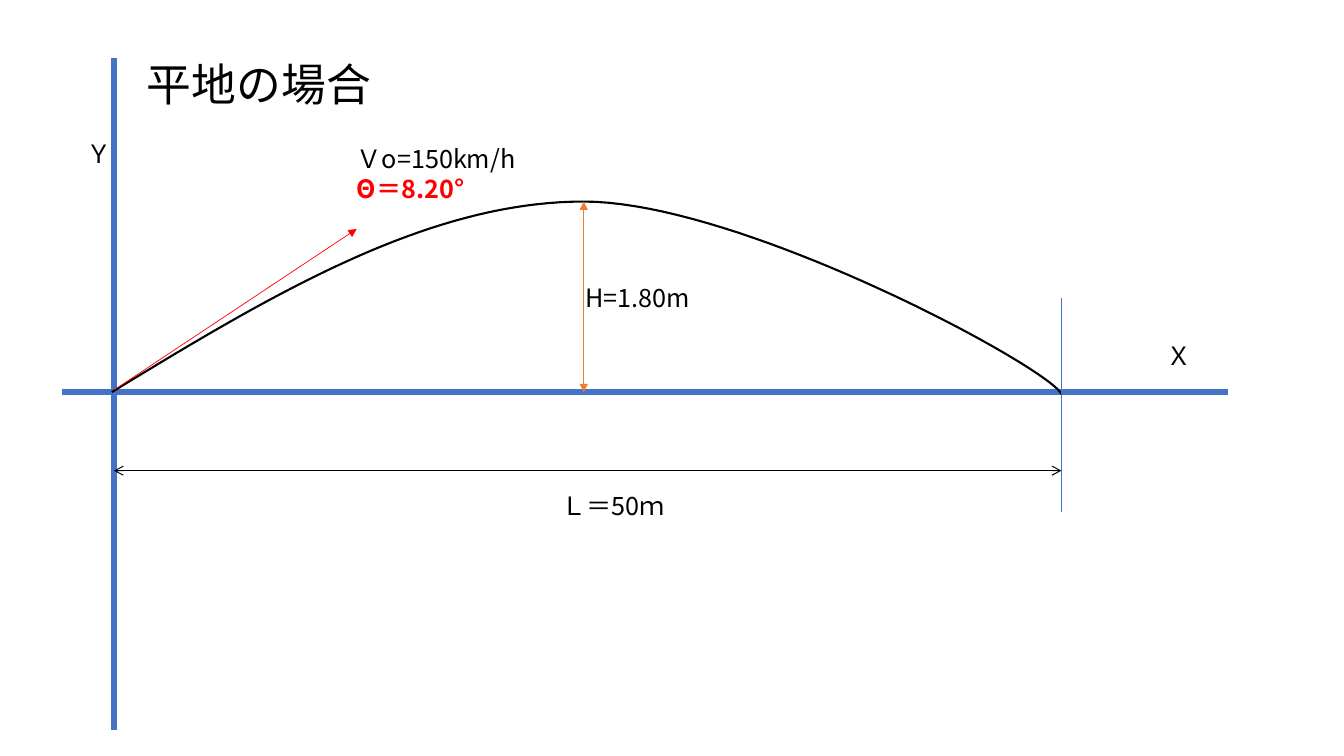
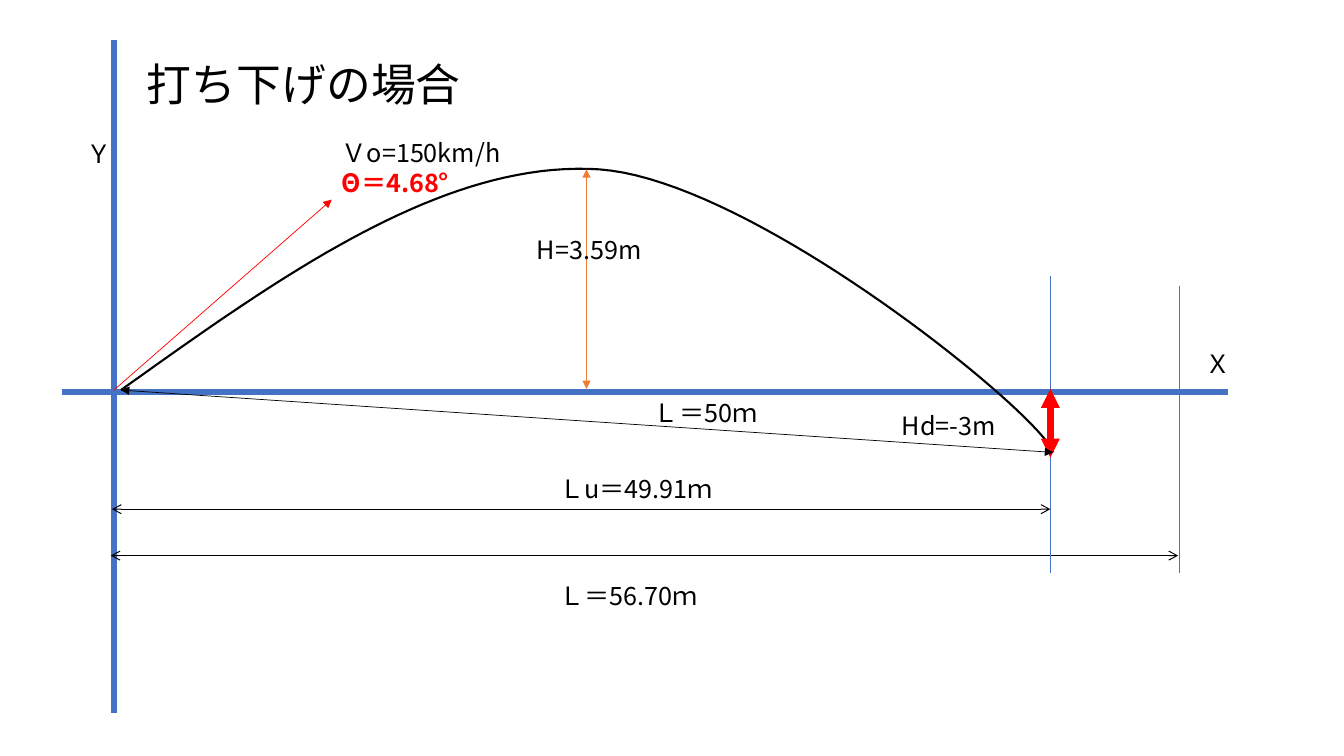
from lxml.etree import SubElement
from pptx import Presentation
from pptx.dml.color import RGBColor
from pptx.enum.shapes import MSO_CONNECTOR
from pptx.enum.text import MSO_ANCHOR, MSO_AUTO_SIZE, PP_ALIGN
from pptx.oxml.ns import qn
from pptx.util import Cm, Pt

FONT = "Noto Sans CJK JP"
BLACK = RGBColor(0x00, 0x00, 0x00)
RED = RGBColor(0xFF, 0x00, 0x00)
BLUE = RGBColor(0x44, 0x72, 0xC4)
ORANGE = RGBColor(0xED, 0x7D, 0x31)

TITLE_ONLY_LAYOUT = 5
ORIGIN_X = 2.87
GROUND_Y = 9.88
LAUNCH = (ORIGIN_X, 9.83)
AXIS_HEIGHT = 16.94
CURVE_STEPS = 40


def add_run(paragraph, text, size=18, color=BLACK, bold=None):
    run = paragraph.add_run()
    run.text = text
    font = run.font
    font.name, font.size, font.bold = FONT, Pt(size), bold
    font.color.rgb = color
    east_asian = SubElement(run.font._element, qn("a:ea"))
    east_asian.set("typeface", FONT)


def place(shape, left, top, width, height):
    shape.left, shape.top = Cm(left), Cm(top)
    shape.width, shape.height = Cm(width), Cm(height)


def add_title(slide, text, width):
    title = slide.shapes.title
    place(title, 3.45, 1.3, width, 1.63)
    frame = title.text_frame
    frame.auto_size = MSO_AUTO_SIZE.NONE
    frame.vertical_anchor = MSO_ANCHOR.TOP
    frame.paragraphs[0].alignment = PP_ALIGN.LEFT
    add_run(frame.paragraphs[0], text, size=32)


def add_label(slide, text, left, top, width=4.7, height=1.02):
    box = slide.shapes.add_textbox(Cm(left), Cm(top), Cm(width), Cm(height))
    frame = box.text_frame
    frame.word_wrap = True
    add_run(frame.paragraphs[0], text)
    return frame


def add_line(slide, start, end, color, width, head=None, tail=None):
    """Draw a straight line; head and tail are arrowheads at start and end."""
    points = [Cm(length) for length in (*start, *end)]
    line = slide.shapes.add_connector(MSO_CONNECTOR.STRAIGHT, *points)
    line.line.color.rgb = color
    line.line.width = Pt(width)
    properties = line.element.spPr
    outline = properties.find(qn("a:ln"))
    for tag, kind in (("a:headEnd", head), ("a:tailEnd", tail)):
        if kind:
            SubElement(outline, qn(tag)).set("type", kind)
    SubElement(properties, qn("a:effectLst"))


def add_axes(slide, top, x_label):
    add_line(slide, (ORIGIN_X, top), (ORIGIN_X, top + AXIS_HEIGHT), BLUE, 4.5)
    add_line(slide, (1.55, GROUND_Y), (30.94, GROUND_Y), BLUE, 4.5)
    add_label(slide, "Ｙ", 1.93, 3.35, 1.55)
    add_label(slide, "Ｘ", *x_label, 1.83)


def bezier_point(controls, t):
    weights = ((1 - t) ** 3, 3 * t * (1 - t) ** 2, 3 * t ** 2 * (1 - t), t ** 3)
    return tuple(
        Cm(sum(weight * value for weight, value in zip(weights, values)))
        for values in zip(*controls)
    )


def add_trajectory(slide, rise, fall):
    """Draw the flight as two cubic curves; fall starts at the end of rise."""
    points = [
        bezier_point(controls, step / CURVE_STEPS)
        for controls in (rise, [rise[-1], *fall])
        for step in range(CURVE_STEPS + 1)
    ]
    builder = slide.shapes.build_freeform(*points[0])
    builder.add_line_segments(points[1:], close=False)
    curve = builder.convert_to_shape()
    curve.shadow.inherit = False
    curve.fill.background()
    curve.line.color.rgb = BLACK
    curve.line.width = Pt(1.5)


def add_guide(slide, x, top, bottom):
    add_line(slide, (x, top), (x, bottom), BLUE, 0.5)


def add_span(slide, left, right, y):
    add_line(slide, (left, y), (right, y), BLACK, 0.75, "arrow", "arrow")


def add_double_arrow(slide, start, end, color, width=0.5):
    add_line(slide, start, end, color, width, "triangle", "triangle")


def add_launch(slide, tip, angle, left, top):
    """Draw the launch direction with its speed and angle."""
    add_line(slide, LAUNCH, tip, RED, 0.5, tail="triangle")
    frame = add_label(slide, "Ｖo=150km/h", left, top, height=1.8)
    add_run(frame.add_paragraph(), angle, color=RED, bold=True)


def add_level_slide(presentation, layout):
    slide = presentation.slides.add_slide(layout)
    add_title(slide, "平地の場合", 8.23)
    add_axes(slide, 1.45, (29.16, 8.46))
    add_trajectory(
        slide,
        [(2.82, 9.88), (6.78, 7.47), (10.74, 5.08), (14.71, 5.08)],
        [(18.69, 5.08), (26.42, 9.25), (26.75, 9.93)],
    )
    add_guide(slide, 26.75, 7.52, 12.9)
    add_span(slide, ORIGIN_X, 26.75, 11.86)
    add_label(slide, "Ｌ＝50ｍ", 13.89, 12.22)
    add_launch(slide, (8.99, 5.77), "Θ＝8.20°", 8.74, 3.48)
    add_double_arrow(slide, (14.71, 5.08), (14.71, GROUND_Y), ORANGE)
    add_label(slide, "H=1.80m", 14.5, 6.99, 3.48)


def add_downhill_slide(presentation, layout):
    slide = presentation.slides.add_slide(layout)
    landing = (26.54, 11.4)
    start = (3.05, 9.83)
    add_title(slide, "打ち下げの場合", 11.48)
    add_axes(slide, 1.02, (30.12, 8.66))
    add_trajectory(
        slide,
        [start, (7.11, 6.93), (11.2, 4.01), (15.11, 4.27)],
        [(19.02, 4.55), (26.29, 10.49), landing],
    )
    add_guide(slide, 29.72, 7.21, 14.43)
    add_span(slide, 2.79, 29.69, 14)
    add_label(slide, "Ｌ＝56.70ｍ", 13.84, 14.5)
    add_launch(slide, (8.36, 5.03), "Θ＝4.68°", 8.36, 3.33)
    add_double_arrow(slide, (14.78, 4.27), (14.78, 9.8), ORANGE)
    add_label(slide, "H=3.59m", 13.28, 5.77, 3.48)
    add_guide(slide, 26.47, 6.96, 14.43)
    add_double_arrow(slide, (26.47, 9.8), (26.47, 11.53), RED, 4.5)
    add_label(slide, "Hd=-3m", 22.48, 10.21, 3.48)
    add_span(slide, 2.82, 26.47, 12.83)
    add_label(slide, "Ｌu＝49.91ｍ", 13.84, 11.81)
    add_double_arrow(slide, start, landing, BLACK)
    add_label(slide, "Ｌ＝50ｍ", 16.23, 9.88)


def main():
    presentation = Presentation()
    presentation.slide_width = Cm(33.87)
    presentation.slide_height = Cm(19.05)
    layout = presentation.slide_layouts[TITLE_ONLY_LAYOUT]
    add_level_slide(presentation, layout)
    add_downhill_slide(presentation, layout)
    presentation.save("out.pptx")


if __name__ == "__main__":
    main()
